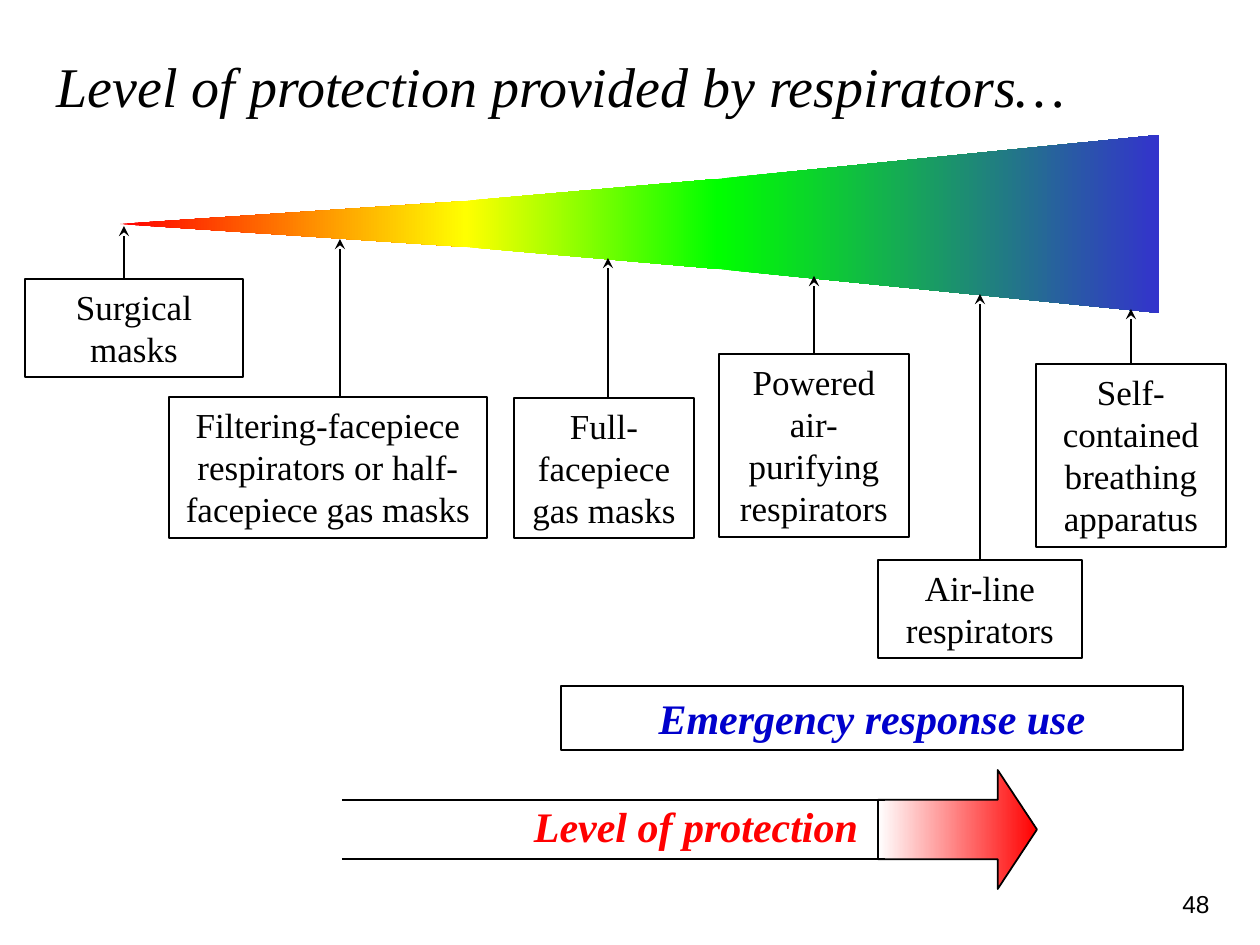
from lxml import etree
from pptx import Presentation
from pptx.dml.color import RGBColor
from pptx.enum.shapes import MSO_CONNECTOR, MSO_SHAPE
from pptx.enum.text import MSO_ANCHOR, PP_ALIGN
from pptx.oxml.ns import qn
from pptx.util import Emu, Pt

BLACK = RGBColor(0, 0, 0)
WHITE = RGBColor(255, 255, 255)
RED = RGBColor(255, 0, 0)
YELLOW = RGBColor(255, 255, 0)
GREEN = RGBColor(0, 255, 0)
INDIGO = RGBColor(0x33, 0x33, 0xCC)
BLUE = RGBColor(0, 0, 0xCC)
SERIF = "Times New Roman"
LEFT, MID, RIGHT = PP_ALIGN.LEFT, PP_ALIGN.CENTER, PP_ALIGN.RIGHT
TOP = MSO_ANCHOR.TOP
RECT, ARROW = MSO_SHAPE.RECTANGLE, MSO_SHAPE.RIGHT_ARROW
LINE = MSO_CONNECTOR.STRAIGHT
PX = 914400 / 126  # EMU per px


def px(*nums):
    return [Emu(round(n * PX)) for n in nums]


def write(shape, text, size, color=BLACK, align=MID, font=SERIF, bold=False, slant=False):
    frame = shape.text_frame
    frame.word_wrap = True
    frame.vertical_anchor = TOP
    frame.text = text
    para = frame.paragraphs[0]
    para.alignment = align
    face = para.runs[0].font
    face.name, face.size, face.bold, face.italic = font, Pt(size), bold, slant
    face.color.rgb = color


prs = Presentation()
prs.slide_width, prs.slide_height = px(1260, 945)
slide = prs.slides.add_slide(prs.slide_layouts[5])
shapes = slide.shapes

# Title
title = shapes.title
title.left, title.top, title.width, title.height = px(44, 38, 1152, 87)
write(title, "Level of protection provided by respirators…", 32, align=LEFT, slant=True)
title.text_frame.paragraphs[0].line_spacing = 1.1

# Widening colour wedge: left, right, half heights, colours
axis = 224
wedge = [
    (120, 466, 0, 23, RED, YELLOW),
    (466, 718, 23, 45, YELLOW, GREEN),
    (718, 1159, 45, 89, GREEN, INDIGO),
]
tinted = []
for x1, x2, h1, h2, start, end in wedge:
    path = shapes.build_freeform(x1, axis - h1, scale=PX)
    points = [(x2, axis - h2), (x2, axis + h2)]
    if h1:
        points.append((x1, axis + h1))
    path.add_line_segments(points, close=True)
    part = path.convert_to_shape()
    part.line.fill.background()
    tinted.append((part, start, end))

# Block arrow at the bottom
arrow = shapes.add_shape(ARROW, *px(878, 770, 159, 119))
arrow.adjustments[0] = 0.5
arrow.adjustments[1] = 0.33
arrow.line.color.rgb = BLACK
arrow.line.width = Pt(1)
tinted.append((arrow, WHITE, RED))

for part, start, end in tinted:
    part.shadow.inherit = False
    part.fill.gradient()
    part.fill.gradient_angle = 0
    for stop, color in zip(part.fill.gradient_stops, (start, end)):
        stop.color.rgb = color
        stop.position = 0 if color is start else 1

# Lines trailing the block arrow
links = []
for y in (800, 859):
    links.append((shapes.add_connector(LINE, *px(342, y, 885, y)), 1, False))
label = shapes.add_textbox(*px(510, 794, 372, 63))
write(label, "Level of protection", 24, RED, bold=True, slant=True)

# Respirator boxes: text, box, pointer x (None = box middle), tip y, line width
kinds = [
    ("Filtering-facepiece respirators or half-facepiece gas masks",
     (169, 397, 318, 141), 340, 239, 1),
    ("Full-facepiece gas masks", (514, 398, 180, 140), 608, 258, 1),
    ("Powered air-purifying respirators", (719, 354, 190, 183), None, 276, 1),
    ("Surgical masks", (25, 279, 218, 98), 124, 226, 1),
    ("Air-line respirators", (878, 560, 204, 98), None, 294, 0.75),
    ("Self-contained breathing apparatus", (1036, 364, 190, 183), None, 309, 1),
]
boxes = []
for text, place, x, tip, width in kinds:
    box = shapes.add_shape(RECT, *px(*place))
    write(box, text, 20)
    boxes.append(box)
    left, top, wide, high = place
    tip_x = x or left + wide // 2
    link = shapes.add_connector(LINE, *px(tip_x, top, tip_x, tip))
    if x is None:
        link.begin_connect(box, 0)
    links.append((link, width, True))

# Emergency use box
use = shapes.add_shape(RECT, *px(561, 686, 622, 64))
write(use, "Emergency response use", 24, BLUE, bold=True, slant=True)
boxes.append(use)

for box in boxes:
    box.shadow.inherit = False
    box.fill.solid()
    box.fill.fore_color.rgb = WHITE
    box.line.color.rgb = BLACK
    box.line.width = Pt(1)

for link, width, head in links:
    link.line.color.rgb = BLACK
    link.line.width = Pt(width)
    if head:
        etree.SubElement(link.line._ln, qn("a:tailEnd"), type="stealth")
    etree.SubElement(link._element.spPr, qn("a:effectLst"))

# Slide number
number = shapes.add_textbox(*px(1147, 883, 75, 45))
write(number, "48", 14, align=RIGHT, font="Arial")

prs.save("out.pptx")
